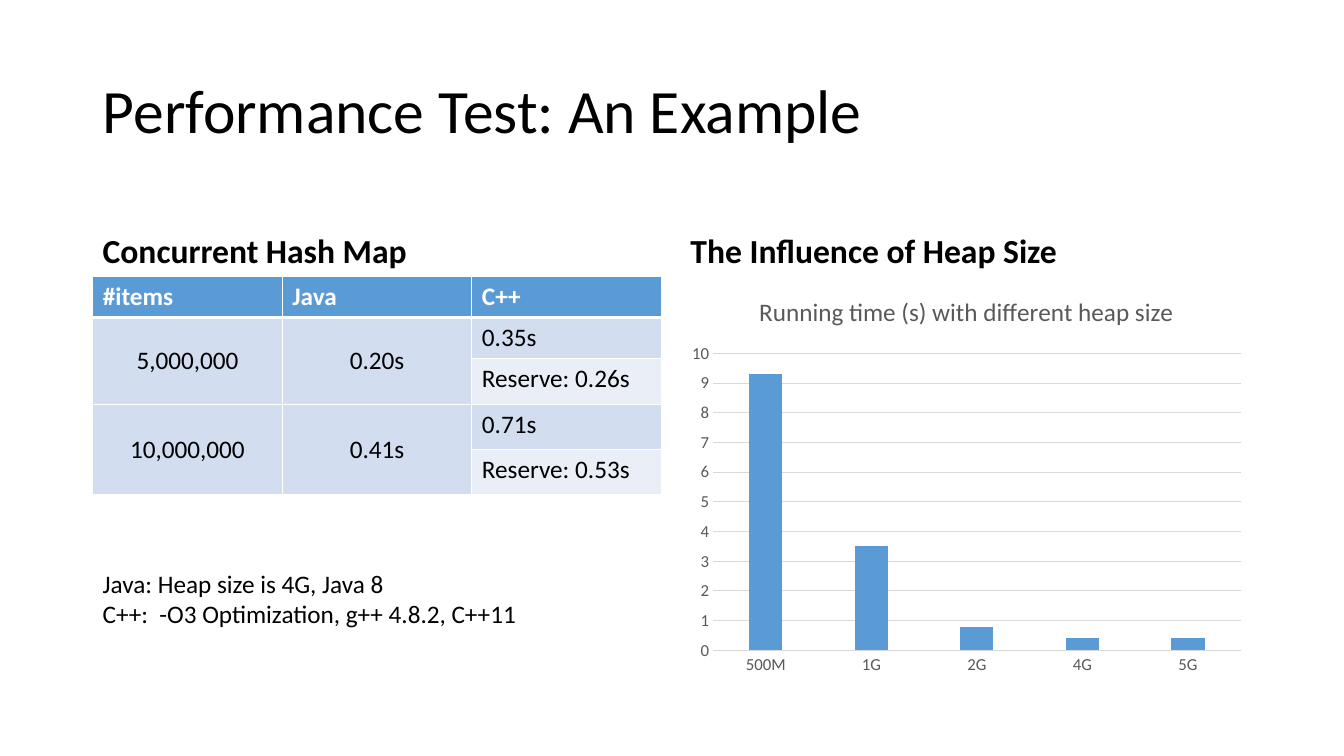
from lxml.etree import SubElement
from pptx import Presentation
from pptx.chart.data import CategoryChartData
from pptx.dml.color import RGBColor
from pptx.enum.chart import XL_CHART_TYPE, XL_TICK_MARK
from pptx.enum.text import MSO_ANCHOR, PP_ALIGN
from pptx.oxml.ns import qn
from pptx.util import Inches, Pt

BLACK = RGBColor(0, 0, 0)
WHITE = RGBColor(0xFF, 0xFF, 0xFF)
BLUE = RGBColor(0x5B, 0x9B, 0xD5)
PALE = RGBColor(0xD2, 0xDE, 0xEF)
FAINT = RGBColor(0xEA, 0xEF, 0xF7)
GRAY = RGBColor(0x59, 0x59, 0x59)
RULE = RGBColor(0xD9, 0xD9, 0xD9)
FACE = "Calibri"

ROWS = [
    ("#items", "Java", "C++"),
    ("5,000,000", "0.20s", "0.35s"),
    ("", "", "Reserve: 0.26s"),
    ("10,000,000", "0.41s", "0.71s"),
    ("", "", "Reserve: 0.53s"),
]
HEIGHTS = [0.41, 0.41, 0.45, 0.45, 0.45]
TIMES = {"500M": 9.3, "1G": 3.5, "2G": 0.8, "4G": 0.4, "5G": 0.4}
NOTES = ["Java: Heap size is 4G, Java 8",
         "C++:  -O3 Optimization, g++ 4.8.2, C++11"]


def style(font, size, color, bold=False):
    """Set the face, size, colour and weight of a font."""
    font.name = FACE
    font.size = Pt(size)
    font.color.rgb = color
    font.bold = bold


def write(para, text, size, color=BLACK, bold=False):
    """Add one styled run to a paragraph."""
    run = para.add_run()
    run.text = text
    style(run.font, size, color, bold)


def add_title(slide, box, text):
    """Move the title placeholder to its box and fill it."""
    shape = slide.shapes.title
    shape.left, shape.top, shape.width, shape.height = map(Inches, box)
    shape.text_frame.vertical_anchor = MSO_ANCHOR.MIDDLE
    para = shape.text_frame.paragraphs[0]
    para.alignment = PP_ALIGN.LEFT
    para.line_spacing = 0.9
    write(para, text, 44)


def add_text(slide, box, lines, size, bold=False, anchor=MSO_ANCHOR.TOP):
    """Add a wrapping text box with one paragraph per line."""
    frame = slide.shapes.add_textbox(*map(Inches, box)).text_frame
    frame.word_wrap = True
    frame.vertical_anchor = anchor
    for i, line in enumerate(lines):
        para = frame.add_paragraph() if i else frame.paragraphs[0]
        write(para, line, size, bold=bold)
    return frame


def add_head(slide, box, text):
    """Add a bold heading at the foot of its box."""
    frame = add_text(slide, box, [text], 24, True, MSO_ANCHOR.BOTTOM)
    frame.paragraphs[0].line_spacing = 0.9
    frame.paragraphs[0].space_before = Pt(10)


def edge(cell, row):
    """Draw white cell borders, thick below the header row."""
    props = cell._tc.get_or_add_tcPr()
    thick = {"lnB": 0, "lnT": 1}
    for side in ("lnL", "lnR", "lnT", "lnB"):
        width = Pt(3 if thick.get(side) == row else 1)
        line = SubElement(props, qn("a:" + side), w=str(width))
        fill = SubElement(line, qn("a:solidFill"))
        SubElement(fill, qn("a:srgbClr"), val=str(WHITE))


def add_grid(slide, box):
    """Add the table of timings, with item counts spanning two rows."""
    grid = slide.shapes.add_table(len(ROWS), 3, *map(Inches, box)).table
    for col in grid.columns:
        col.width = Inches(box[2] / 3)
    for i, (row, high) in enumerate(zip(ROWS, HEIGHTS)):
        grid.rows[i].height = Inches(high)
        for j, text in enumerate(row):
            cell = grid.cell(i, j)
            edge(cell, i)
            cell.fill.solid()
            shade = FAINT if i % 2 == 0 and j == 2 else PALE
            cell.fill.fore_color.rgb = shade if i else BLUE
            if i % 2 and j < 2:
                cell.merge(grid.cell(i + 1, j))
                cell.vertical_anchor = MSO_ANCHOR.MIDDLE
                cell.text_frame.paragraphs[0].alignment = PP_ALIGN.CENTER
            if text:
                write(cell.text_frame.paragraphs[0], text, 18,
                      BLACK if i else WHITE, i == 0)


def add_bars(slide, box):
    """Add the column chart of running time by heap size."""
    data = CategoryChartData()
    data.categories = list(TIMES)
    data.add_series("Series 1", list(TIMES.values()))
    chart = slide.shapes.add_chart(
        XL_CHART_TYPE.COLUMN_CLUSTERED, *map(Inches, box), data).chart
    style(chart.font, 10, BLACK)
    chart.has_legend = False
    chart.has_title = True
    write(chart.chart_title.text_frame.paragraphs[0],
          "Running time (s) with different heap size", 18, GRAY)
    for axis in (chart.category_axis, chart.value_axis):
        axis.major_tick_mark = axis.minor_tick_mark = XL_TICK_MARK.NONE
        style(axis.tick_labels.font, 12, GRAY)
    value = chart.value_axis
    value.minimum_scale, value.maximum_scale, value.major_unit = 0, 10, 1
    value.format.line.fill.background()
    value.has_major_gridlines = True
    for line in (value.major_gridlines.format.line,
                 chart.category_axis.format.line):
        line.color.rgb = RULE
        line.width = Pt(0.75)
    plot = chart.plots[0]
    plot.gap_width, plot.overlap = 219, -27
    plot.vary_by_categories = False
    fill = plot.series[0].format.fill
    fill.solid()
    fill.fore_color.rgb = BLUE


def main():
    """Build and save the slide."""
    deck = Presentation()
    deck.slide_width, deck.slide_height = Inches(13.33), Inches(7.5)
    slide = deck.slides.add_slide(deck.slide_layouts[5])
    left, right, wide = 0.92, 6.75, 5.64
    add_title(slide, (left, 0.4, 11.5, 1.45), "Performance Test: An Example")
    add_head(slide, (left, 1.84, wide, 0.9), "Concurrent Hash Map")
    add_grid(slide, (left, 2.74, wide, sum(HEIGHTS)))
    add_head(slide, (right, 1.84, 5.67, 0.9), "The Influence of Heap Size")
    add_bars(slide, (right, 2.74, 5.67, 4.03))
    add_text(slide, (left, 5.59, wide, 0.71), NOTES, 18)
    deck.save("out.pptx")


if __name__ == "__main__":
    main()
